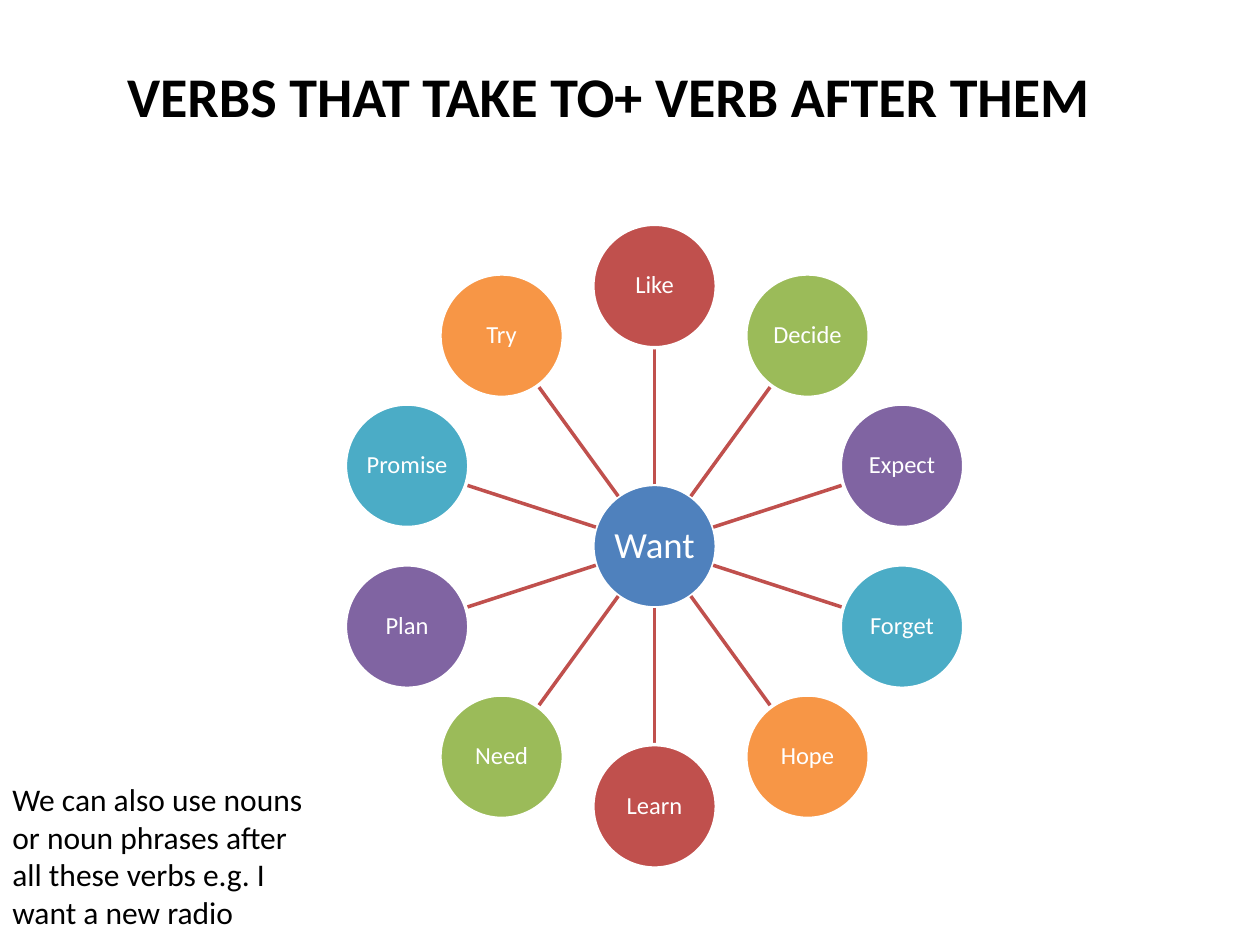
import math

from lxml import etree
from pptx import Presentation
from pptx.dml.color import RGBColor
from pptx.enum.shapes import MSO_CONNECTOR, MSO_SHAPE
from pptx.enum.text import MSO_ANCHOR, PP_ALIGN
from pptx.oxml.ns import qn
from pptx.util import Inches, Pt

STRAIGHT = MSO_CONNECTOR.STRAIGHT
OVAL = MSO_SHAPE.OVAL
TOP, MIDDLE = MSO_ANCHOR.TOP, MSO_ANCHOR.MIDDLE
LEFT, CENTER = PP_ALIGN.LEFT, PP_ALIGN.CENTER

FONT = "Calibri"
BLACK = RGBColor(0x00, 0x00, 0x00)
WHITE = RGBColor(0xFF, 0xFF, 0xFF)
BLUE = RGBColor(0x4F, 0x81, 0xBD)
RED = RGBColor(0xC0, 0x50, 0x4D)
GREEN = RGBColor(0x9B, 0xBB, 0x59)
PURPLE = RGBColor(0x80, 0x64, 0xA2)
TEAL = RGBColor(0x4B, 0xAC, 0xC6)
ORANGE = RGBColor(0xF7, 0x96, 0x46)
VERB_COLORS = [RED, GREEN, PURPLE, TEAL, ORANGE]

HUB_VERB = "Want"
VERBS = ["Like", "Decide", "Expect", "Forget", "Hope",
         "Learn", "Need", "Plan", "Promise", "Try"]
CIRCLE_SIZE = 0.98


def write_text(frame, text, size, color=BLACK, bold=False, align=LEFT,
               anchor=TOP, inset=None, line_spacing=None):
    frame.word_wrap = True
    frame.vertical_anchor = anchor
    if inset is not None:
        frame.margin_left = frame.margin_right = inset
        frame.margin_top = frame.margin_bottom = inset
    paragraph = frame.paragraphs[0]
    paragraph.alignment = align
    paragraph.line_spacing = line_spacing
    run = paragraph.add_run()
    run.text = text
    run.font.name = FONT
    run.font.size = Pt(size)
    run.font.bold = bold
    run.font.color.rgb = color


def add_text_block(slide, left, top, width, height, text, **text_format):
    block = slide.shapes.add_textbox(
        Inches(left), Inches(top), Inches(width), Inches(height))
    write_text(block.text_frame, text, **text_format)


def add_verb_circle(slide, center_x, center_y, verb, color, size):
    circle = slide.shapes.add_shape(
        OVAL, Inches(center_x - CIRCLE_SIZE / 2), Inches(center_y - CIRCLE_SIZE / 2),
        Inches(CIRCLE_SIZE), Inches(CIRCLE_SIZE))
    circle.shadow.inherit = False
    circle.fill.solid()
    circle.fill.fore_color.rgb = color
    circle.line.color.rgb = WHITE
    circle.line.width = Pt(2)
    write_text(circle.text_frame, verb, size=size, color=WHITE, align=CENTER,
               anchor=MIDDLE, inset=Inches(0.01), line_spacing=0.9)


def add_spoke(slide, start_x, start_y, end_x, end_y):
    spoke = slide.shapes.add_connector(
        STRAIGHT, Inches(start_x), Inches(start_y), Inches(end_x), Inches(end_y))
    spoke.line.color.rgb = RED
    spoke.line.width = Pt(2)
    etree.SubElement(spoke._element.spPr, qn("a:effectLst"))


def add_verb_wheel(slide, left, top, size):
    """Place the hub verb and its ring of verbs, clockwise from the top."""
    center_x, center_y = left + size / 2, top + size / 2
    ring_radius = (size - CIRCLE_SIZE) / 2
    hub_radius = CIRCLE_SIZE / 2

    def point_at(angle, radius):
        return (center_x + radius * math.sin(angle),
                center_y - radius * math.cos(angle))

    add_verb_circle(slide, center_x, center_y, HUB_VERB, BLUE, size=21)
    for index, verb in enumerate(VERBS):
        angle = 2 * math.pi * index / len(VERBS)
        add_spoke(slide, *point_at(angle, hub_radius),
                  *point_at(angle, ring_radius - hub_radius))
        color = VERB_COLORS[index % len(VERB_COLORS)]
        add_verb_circle(slide, *point_at(angle, ring_radius), verb, color, size=14)


def main():
    presentation = Presentation()
    presentation.slide_width = Inches(10)
    presentation.slide_height = Inches(7.5)
    slide = presentation.slides.add_slide(presentation.slide_layouts[6])

    add_verb_wheel(slide, left=2.64, top=1.78, size=5.11)
    add_text_block(slide, 0.91, 0.44, 9.09, 1.18,
                   "VERBS THAT TAKE TO+ VERB AFTER THEM", size=32, bold=True)
    add_text_block(slide, 0, 6.14, 2.64, 1.3,
                   "We can also use nouns or noun phrases after all these verbs "
                   "e.g. I want a new radio", size=18)
    presentation.save("out.pptx")


if __name__ == "__main__":
    main()
